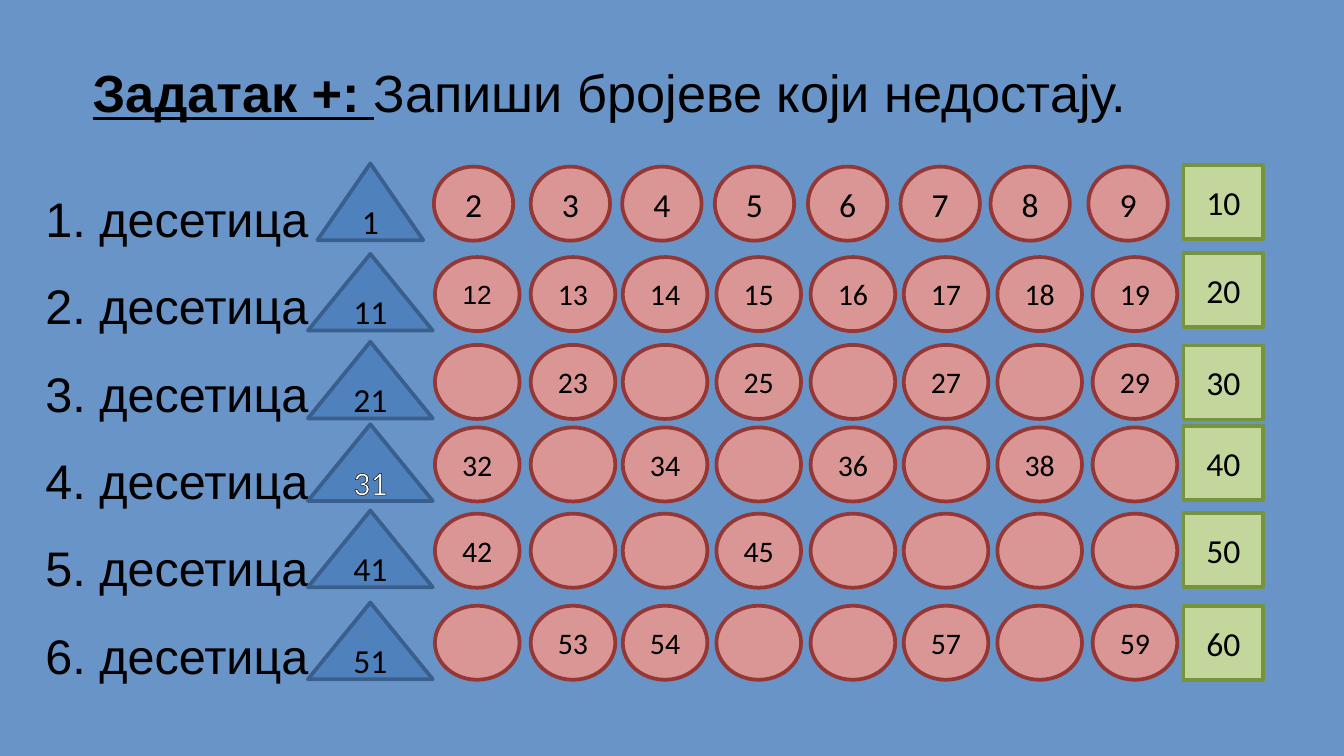
from dataclasses import dataclass

from lxml import etree
from pptx import Presentation, util as u
from pptx.dml.color import RGBColor
from pptx.enum import shapes, text
from pptx.oxml import ns

BLACK = RGBColor(0x00, 0x00, 0x00)
WHITE = RGBColor(0xFF, 0xFF, 0xFF)
BACK = RGBColor(0x69, 0x94, 0xC7)
BLUE = RGBColor(0x4F, 0x81, 0xBD)
NAVY = RGBColor(0x3A, 0x5F, 0x8C)
PINK = RGBColor(0xD9, 0x96, 0x94)
RED = RGBColor(0x95, 0x37, 0x35)
LIME = RGBColor(0xC3, 0xD6, 0x9B)
GREEN = RGBColor(0x77, 0x93, 0x3C)
KIND = shapes.MSO_SHAPE


@dataclass(frozen=True)
class Style:
    kind: KIND
    fill: RGBColor
    line: RGBColor
    edge: float


@dataclass(frozen=True)
class Box:
    left: float
    top: float
    width: float
    height: float


@dataclass(frozen=True)
class Row:
    top: float
    end: float
    shown: tuple[int, ...]


FIRST = Style(KIND.ISOSCELES_TRIANGLE, BLUE, NAVY, 1.5)
MID = Style(KIND.OVAL, PINK, RED, 0.75)
LAST = Style(KIND.RECTANGLE, LIME, GREEN, 0.75)
UNITS = range(2, 10)
ONES = (8.2, 10.03, 11.76, 13.51, 15.27, 17.02, 18.72, 20.57)
TENS = (8.22, 10.03, 11.77, 13.54, 15.32, 17.08, 18.85, 20.65)
ROWS = (
    Row(3.15, 3.12, tuple(UNITS)),
    Row(4.86, 4.78, tuple(UNITS)),
    Row(6.52, 6.53, (3, 5, 7, 9)),
    Row(8.08, 8.05, (2, 4, 6, 8)),
    Row(9.71, 9.7, (2, 5)),
    Row(11.45, 11.46, (3, 4, 7, 9)),
)


def dress(run, size: float, face: str, tint: RGBColor = BLACK) -> None:
    run.font.size = u.Pt(size)
    run.font.name = face
    run.font.color.rgb = tint


def trace(run, width: float) -> None:
    line = etree.Element(ns.qn("a:ln"), w=str(u.Pt(width)))
    fill = etree.SubElement(line, ns.qn("a:solidFill"))
    etree.SubElement(fill, ns.qn("a:srgbClr"), val=str(BLACK))
    run._r.get_or_add_rPr().insert(0, line)


def label(slide, box: Box):
    area = slide.shapes.add_textbox(
        u.Cm(box.left), u.Cm(box.top), u.Cm(box.width), u.Cm(box.height))
    frame = area.text_frame
    frame.word_wrap = True
    frame.auto_size = text.MSO_AUTO_SIZE.SHAPE_TO_FIT_TEXT
    return frame


def token(slide, style: Style, box: Box, words: str, size: float = 18,
          face: str = "Calibri", tint: RGBColor = BLACK) -> None:
    item = slide.shapes.add_shape(
        style.kind, u.Cm(box.left), u.Cm(box.top), u.Cm(box.width), u.Cm(box.height))
    item.shadow.inherit = False
    item.fill.solid()
    item.fill.fore_color.rgb = style.fill
    item.line.color.rgb = style.line
    item.line.width = u.Pt(2)
    if not words:
        return
    frame = item.text_frame
    frame.text = words
    frame.vertical_anchor = text.MSO_ANCHOR.MIDDLE
    para = frame.paragraphs[0]
    para.alignment = text.PP_ALIGN.CENTER
    run = para.runs[0]
    dress(run, size, face, tint)
    trace(run, style.edge)


def series(slide, index: int, row: Row) -> None:
    base = index * 10
    single = index == 0
    wide = 2.0 if single else 2.36
    start = Box(7 - wide / 2, row.top - 0.06, wide, 1.45)
    token(slide, FIRST, start, str(base + 1), tint=WHITE if index == 3 else BLACK)
    for unit, left in zip(UNITS, ONES if single else TENS):
        words = str(base + unit) if unit in row.shown else ""
        box = Box(left, row.top, 1.5 if single else 1.6, 1.4)
        if words == "12":
            token(slide, MID, box, words, 14, "Arial")
        else:
            token(slide, MID, box, words, 18 if single else 16)
    token(slide, LAST, Box(22.37, row.end, 1.5, 1.4), str(base + 10))


def title(slide) -> None:
    para = label(slide, Box(1.5, 1.02, 21, 1.45)).paragraphs[0]
    for words, strong in (("Задатак +: ", True), ("Запиши бројеве који недостају.", False)):
        run = para.add_run()
        run.text = words
        dress(run, 28, "Arial")
        run.font.bold = strong
        run.font.underline = strong


def names(slide) -> None:
    frame = label(slide, Box(0.61, 2.9, 6.6, 10.06))
    frame.text = "\n".join(f"{n}. десетица" for n in range(1, len(ROWS) + 1))
    for para in frame.paragraphs:
        para.line_spacing = 1.5
        dress(para.runs[0], 26, "Arial")


def main() -> None:
    deck = Presentation()
    deck.slide_width = u.Cm(25.4)
    deck.slide_height = u.Cm(14.29)
    slide = deck.slides.add_slide(deck.slide_layouts[6])
    slide.background.fill.solid()
    slide.background.fill.fore_color.rgb = BACK
    title(slide)
    names(slide)
    for index, row in enumerate(ROWS):
        series(slide, index, row)
    deck.save("out.pptx")


if __name__ == "__main__":
    main()
